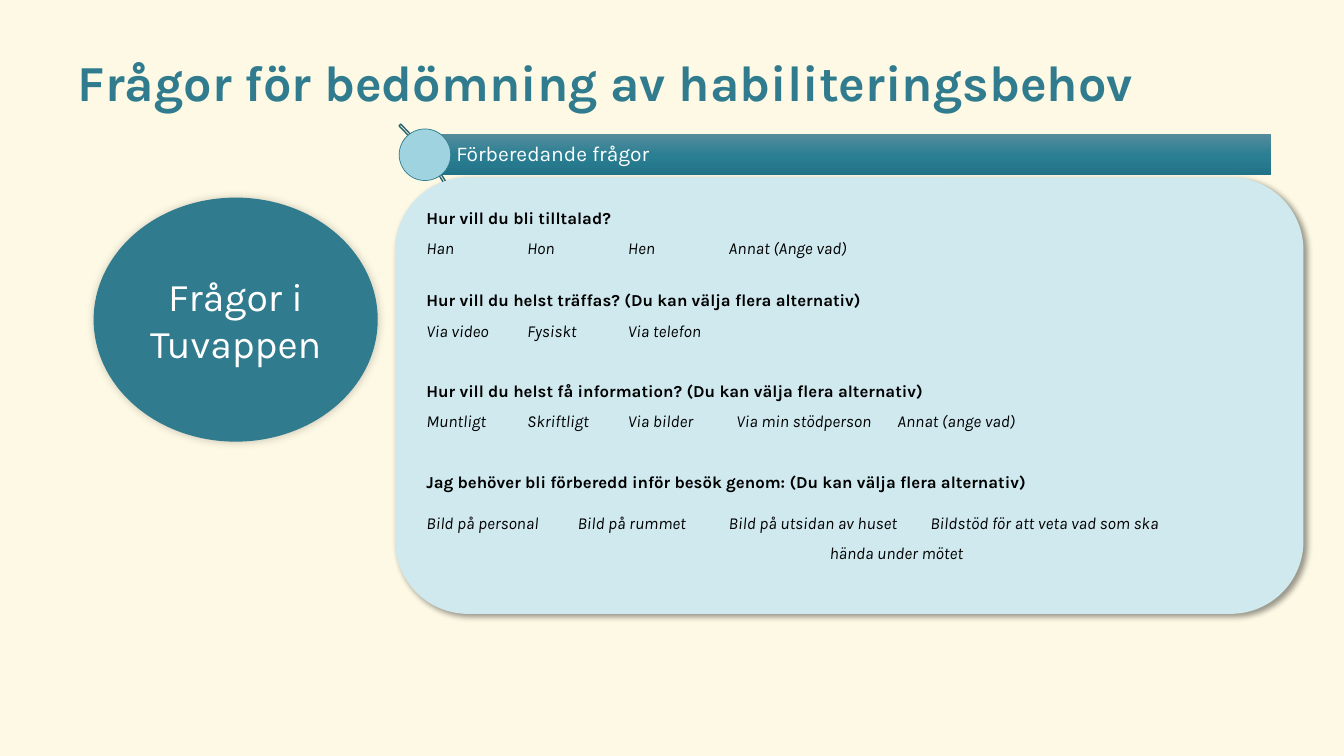
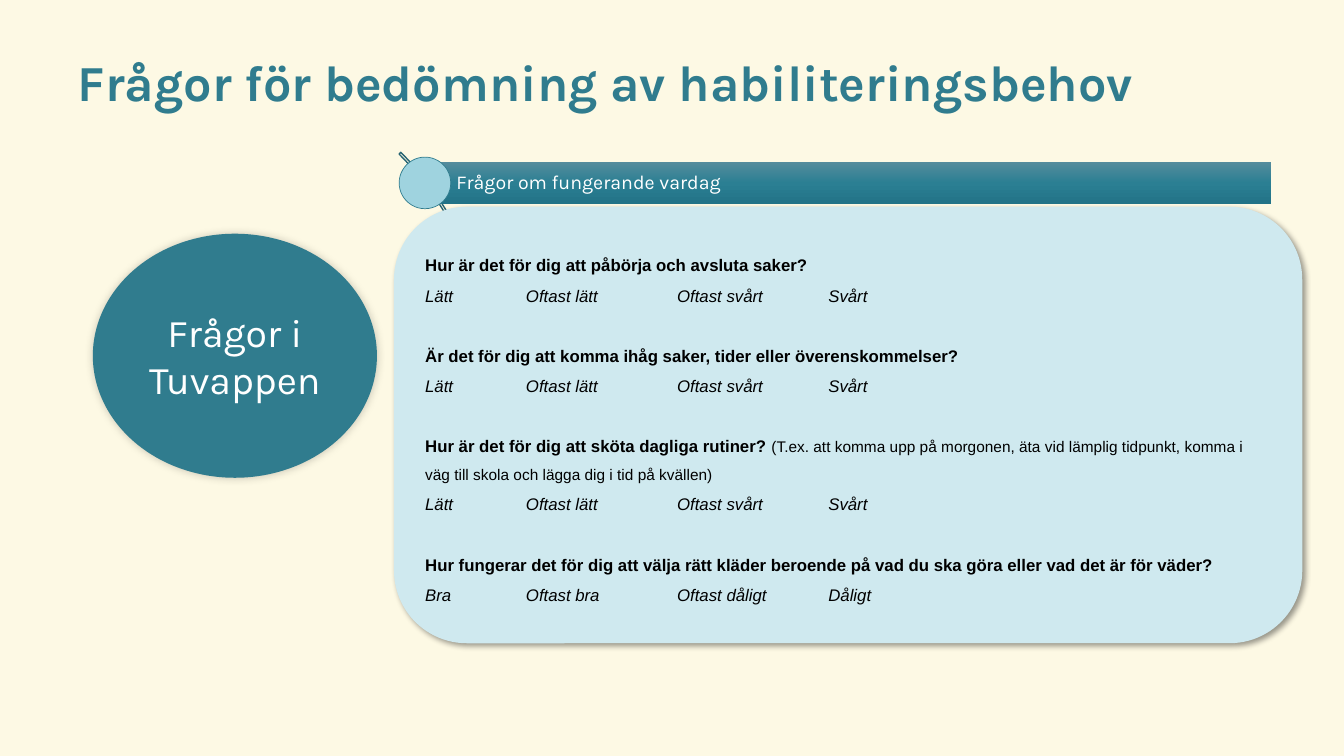
from dataclasses import dataclass
from lxml.etree import SubElement
from pptx import Presentation
from pptx.dml.color import RGBColor
from pptx.enum.shapes import MSO_SHAPE
from pptx.enum.text import MSO_ANCHOR, MSO_AUTO_SIZE, PP_ALIGN
from pptx.oxml.ns import qn
from pptx.shapes.autoshape import Shape
from pptx.slide import Slide
from pptx.util import Cm, Pt

TITLE = "Frågor för bedömning av habiliteringsbehov"
BADGE = "Frågor i Tuvappen"
FACE = "Karla"
CREAM, TEAL, DARK, SKY, PALE = "FDF9E4", "307C8E", "266372", "9FD3DF", "CFE9EF"
WHITE, BLACK = "FFFFFF", "000000"
BAND = (("558C9C", 0), ("2B7F93", 50), ("227387", 100))
LINE = 21.5  # height of one text line in the panel, in points


@dataclass(frozen=True)
class Row:
    cells: tuple[str, ...]
    tabs: tuple[float, ...]
    gap: float = 0


@dataclass(frozen=True)
class Item:
    ask: str
    rows: tuple[Row, ...]
    gap: float = LINE
    note: str = ""


@dataclass(frozen=True)
class Page:
    head: str
    size: float
    top: float
    badge: tuple[float, float]
    panel: tuple[float, float]
    face: str
    foot: float
    items: tuple[Item, ...]


@dataclass(frozen=True)
class Glow:
    alpha: int
    blur: float
    dist: float
    angle: int


THIRDS = (2.54, 5.08, 7.62)
SCALE = Row(("Lätt", "Oftast lätt", "Oftast svårt", "Svårt"), (2.54, 6.35, 10.16))
PAGES = (
    Page("Förberedande frågor", 15, 3.38, (2.36, 4.98), (9.96, 4.47), FACE, 0.89, (
        Item("Hur vill du bli tilltalad?",
             (Row(("Han", "Hon", "Hen", "Annat (Ange vad)"), THIRDS),), 0),
        Item("Hur vill du helst träffas? (Du kan välja flera alternativ)",
             (Row(("Via video", "Fysiskt", "Via telefon"), THIRDS),), 15.5),
        Item("Hur vill du helst få information? (Du kan välja flera alternativ)",
             (Row(("Muntligt", "Skriftligt", "Via bilder", "Via min stödperson",
                   "Annat (ange vad)"), (2.54, 5.08, 7.81, 11.87)),)),
        Item("Jag behöver bli förberedd inför besök genom: (Du kan välja flera alternativ)",
             (Row(("Bild på personal", "Bild på rummet", "Bild på utsidan av huset",
                   "Bildstöd för att veta vad som ska"), (3.81, 7.62, 12.7), 8),
              Row(("", "hända under mötet"), (10.16,)))),
    )),
    Page("Frågor om fungerande vardag", 14, 4.09, (2.34, 5.89), (9.93, 5.21), "Arial", 0.13, (
        Item("Hur är det för dig att påbörja och avsluta saker?", (SCALE,), 0),
        Item("Är det för dig att komma ihåg saker, tider eller överenskommelser?", (SCALE,)),
        Item("Hur är det för dig att sköta dagliga rutiner? ", (SCALE,),
             note="(T.ex. att komma upp på morgonen, äta vid lämplig tidpunkt, komma i väg "
                  "till skola och lägga dig i tid på kvällen)"),
        Item("Hur fungerar det för dig att välja rätt kläder beroende på vad du ska göra "
             "eller vad det är för väder?",
             (Row(("Bra", "Oftast bra", "Oftast dåligt", "Dåligt"), SCALE.tabs),)),
    )),
)


def paint(target, tint: str) -> None:
    """Give a fill or line format one solid colour."""
    target.fill.solid()
    target.fill.fore_color.rgb = RGBColor.from_string(tint)


def style(para, face: str, size: float, tint: str, bold=False, slant=False) -> None:
    font = para.font
    font.name, font.size, font.bold, font.italic = face, Pt(size), bold, slant
    font.color.rgb = RGBColor.from_string(tint)


def draw(slide: Slide, kind, left: float, top: float, width: float, height: float,
         tint: str = "", edge: str = "", weight: float = 0) -> Shape:
    """Add a preset shape, measured in centimetres, with no shadow."""
    shape = slide.shapes.add_shape(kind, Cm(left), Cm(top), Cm(width), Cm(height))
    shape.shadow.inherit = False
    if tint:
        paint(shape, tint)
    else:
        shape.fill.background()
    if edge:
        paint(shape.line, edge)
        shape.line.width = Pt(weight)
    else:
        shape.line.fill.background()
    shape.text_frame.vertical_anchor = MSO_ANCHOR.MIDDLE
    return shape


def shade(shape: Shape, glow: Glow) -> None:
    """Put an outer shadow on a shape."""
    effects = shape._element.spPr.find(qn("a:effectLst"))
    outer = SubElement(effects, qn("a:outerShdw"), blurRad=str(Pt(glow.blur)),
                       dist=str(Pt(glow.dist)), dir=str(glow.angle * 60000),
                       algn="ctr", rotWithShape="0")
    ink = SubElement(outer, qn("a:srgbClr"), val=BLACK)
    SubElement(ink, qn("a:alpha"), val=str(glow.alpha * 1000))


def blend(shape: Shape) -> None:
    """Fill a shape with the band's gradient, from top to bottom."""
    shape.fill.gradient()
    shape.fill.gradient_angle = 270
    stops = shape._element.spPr.find(qn("a:gradFill")).find(qn("a:gsLst"))
    for stop in list(stops):
        stops.remove(stop)
    for tint, place in BAND:
        stop = SubElement(stops, qn("a:gs"), pos=str(place * 1000))
        SubElement(stop, qn("a:srgbClr"), val=tint)


def add_title(slide: Slide) -> None:
    title = slide.shapes.title
    title.left, title.top, title.width, title.height = Cm(1.7), Cm(0.94), Cm(30.48), Cm(2.08)
    frame = title.text_frame
    frame.text = TITLE
    frame.auto_size = MSO_AUTO_SIZE.NONE
    frame.vertical_anchor = MSO_ANCHOR.MIDDLE
    para = frame.paragraphs[0]
    para.alignment, para.line_spacing = PP_ALIGN.LEFT, 1.1
    style(para, FACE, 36, TEAL, bold=True)


def add_badge(slide: Slide, page: Page) -> None:
    badge = draw(slide, MSO_SHAPE.OVAL, *page.badge, 7.16, 6.15, TEAL)
    shade(badge, Glow(20, 6, 0, 225))
    para = badge.text_frame.paragraphs[0]
    para.text, para.alignment = BADGE, PP_ALIGN.CENTER
    style(para, FACE, 28, WHITE)


def add_band(slide: Slide, page: Page) -> None:
    """Draw the arc, the heading band and the ball at its left end."""
    arc = draw(slide, MSO_SHAPE.BLOCK_ARC, -2.95, page.top - 2.49, 15.29, 15.29,
               edge=DARK, weight=1)
    for spot, value in enumerate((189, 27, 0.004)):
        arc.adjustments[spot] = value
    band = draw(slide, MSO_SHAPE.RECTANGLE, 10.69, page.top, 21.34, 1.04)
    blend(band)
    frame = band.text_frame
    frame.margin_left = Cm(0.81)
    frame.margin_top = frame.margin_right = frame.margin_bottom = Cm(0.1)
    para = frame.paragraphs[0]
    para.text, para.alignment, para.line_spacing = page.head, PP_ALIGN.LEFT, 0.9
    style(para, FACE, page.size, WHITE)
    draw(slide, MSO_SHAPE.OVAL, 10.06, page.top - 0.13, 1.3, 1.3, SKY, TEAL, 0.5)


def add_line(frame, first: bool, gap: float, tabs: tuple[float, ...] = ()):
    """Start a panel paragraph with its spacing and tab stops."""
    para = frame.paragraphs[0] if first else frame.add_paragraph()
    para.alignment, para.line_spacing = PP_ALIGN.LEFT, 1.5
    if gap:
        para.space_before = Pt(gap)
    if tabs:
        stops = SubElement(para._p.get_or_add_pPr(), qn("a:tabLst"))
        for tab in tabs:
            SubElement(stops, qn("a:tab"), pos=str(Cm(tab)), algn="l")
    return para


def add_panel(slide: Slide, page: Page) -> None:
    panel = draw(slide, MSO_SHAPE.ROUNDED_RECTANGLE, *page.panel, 22.89, 11, PALE)
    shade(panel, Glow(40, 4, 3, 45))
    frame = panel.text_frame
    frame.margin_bottom = Cm(page.foot)
    for spot, item in enumerate(page.items):
        para = add_line(frame, spot == 0, item.gap)
        para.add_run().text = item.ask
        style(para, page.face, 12, BLACK, bold=True)
        if item.note:
            note = para.add_run()
            note.text, note.font.size, note.font.bold = item.note, Pt(11), False
        for row in item.rows:
            para = add_line(frame, False, row.gap, row.tabs)
            para.add_run().text = "\t".join(row.cells)
            style(para, page.face, 12, BLACK, slant=True)


def main() -> None:
    deck = Presentation()
    deck.slide_width, deck.slide_height = Cm(33.87), Cm(19.05)
    paint(deck.slide_master.background, CREAM)
    for page in PAGES:
        slide = deck.slides.add_slide(deck.slide_layouts[5])
        add_title(slide)
        for add in (add_badge, add_band, add_panel):
            add(slide, page)
    deck.save("out.pptx")


if __name__ == "__main__":
    main()
